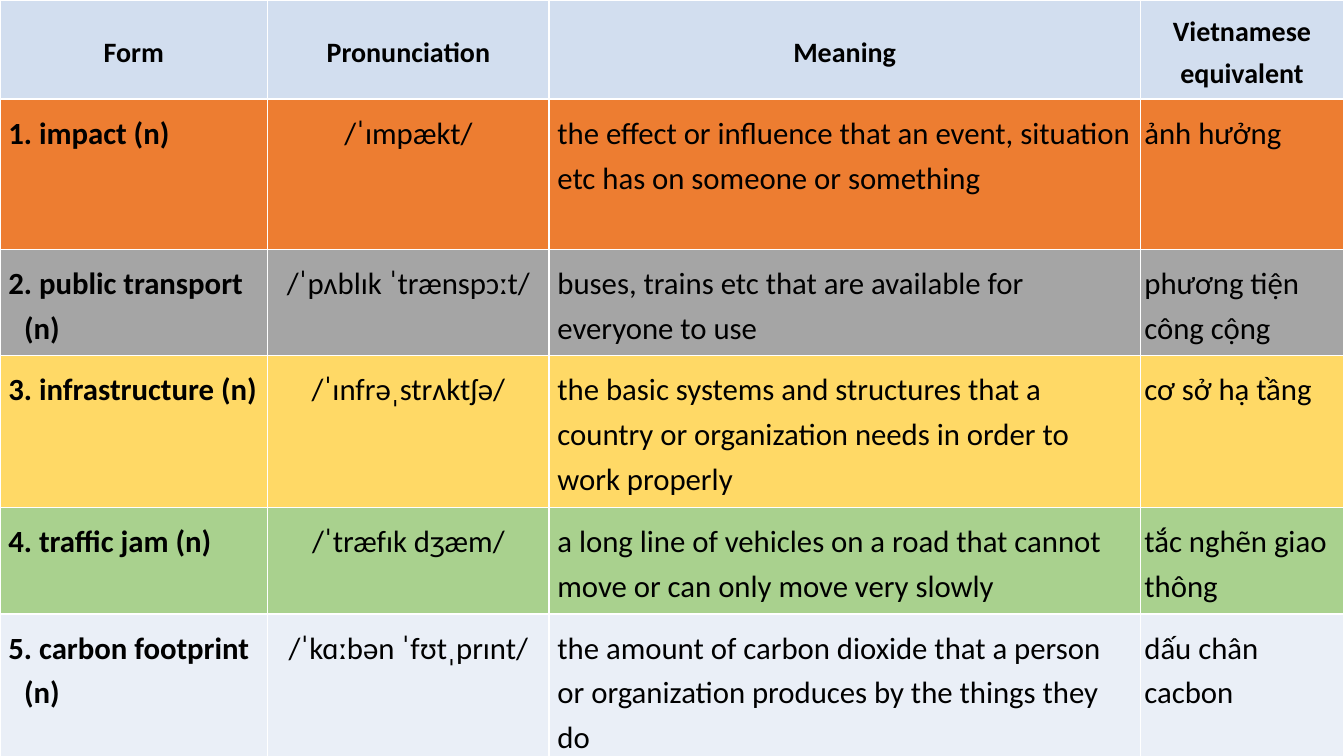
from dataclasses import dataclass

from pptx import Presentation
from pptx.dml.color import RGBColor
from pptx.enum.text import MSO_ANCHOR as Anchor, PP_ALIGN as Align
from pptx.util import Pt

PX = 9525  # EMU per px, 96 px to the inch
SLIDE_W, SLIDE_H = 1280, 720
HEADER_H = 94
HEADER_FILL = "D2DEEF"
PAD, NARROW_PAD, HANGING = 8, 4, 15


@dataclass
class Column:
    heading: str
    width: int
    pad: int
    align: Align = Align.LEFT
    bold: bool = False
    hanging: int = 0


@dataclass
class Entry:
    texts: tuple[str, str, str, str]
    height: int
    fill: str


COLUMNS = [
    Column("Form", 255, PAD, bold=True, hanging=HANGING),
    Column("Pronunciation", 268, NARROW_PAD, Align.CENTER),
    Column("Meaning", 563, PAD),
    Column("Vietnamese equivalent", 194, NARROW_PAD),
]

ENTRIES = [
    Entry(("1. impact (n)", "/ˈɪmpækt/",
           "the effect or influence that an event, situation etc has on someone or something",
           "ảnh hưởng"), 143, "ED7D31"),
    Entry(("2. public transport (n)", "/ˈpʌblɪk ˈtrænspɔːt/",
           "buses, trains etc that are available for everyone to use",
           "phương tiện công cộng"), 99, "A5A5A5"),
    Entry(("3. infrastructure (n)", "/ˈɪnfrəˌstrʌktʃə/",
           "the basic systems and structures that a country or organization needs "
           "in order to work properly",
           "cơ sở hạ tầng"), 143, "FFD966"),
    Entry(("4. traffic jam (n)", "/ˈtræfɪk dʒæm/",
           "a long line of vehicles on a road that cannot move or can only move very slowly",
           "tắc nghẽn giao thông"), 99, "A9D18E"),
    Entry(("5. carbon footprint (n)", "/ˈkɑːbən ˈfʊtˌprɪnt/",
           "the amount of carbon dioxide that a person or organization produces "
           "by the things they do",
           "dấu chân cacbon"), 143, "EAEFF7"),
]


def px(n: int) -> int:
    return n * PX


def rgb(value: str) -> RGBColor:
    return RGBColor.from_string(value)


def fill_cell(cell, text: str, fill: str, pad: int, size: int,
              bold: bool, align: Align, hanging: int = 0) -> None:
    cell.fill.solid()
    cell.fill.fore_color.rgb = rgb(fill)
    cell.margin_left = cell.margin_right = px(pad)
    cell.margin_top = cell.margin_bottom = px(PAD)
    p = cell.text_frame.paragraphs[0]
    p.text = text
    p.alignment = align
    p.line_spacing = 1.2
    p.font.name = "Calibri"
    p.font.size = Pt(size)
    p.font.bold = bold
    p.font.color.rgb = rgb("000000")
    if hanging:
        pPr = p._p.get_or_add_pPr()
        pPr.set("marL", str(px(hanging)))
        pPr.set("indent", str(-px(hanging)))


def add_vocabulary(s) -> None:
    height = HEADER_H + sum(e.height for e in ENTRIES)
    table = s.shapes.add_table(len(ENTRIES) + 1, len(COLUMNS), 0, 0,
                               px(SLIDE_W), px(height)).table
    table.horz_banding = False

    # Header row
    table.rows[0].height = px(HEADER_H)
    for c, col in enumerate(COLUMNS):
        table.columns[c].width = px(col.width)
        cell = table.cell(0, c)
        cell.vertical_anchor = Anchor.MIDDLE
        fill_cell(cell, col.heading, HEADER_FILL, NARROW_PAD, 20, True, Align.CENTER)

    # Vocabulary rows
    for r, entry in enumerate(ENTRIES, start=1):
        table.rows[r].height = px(entry.height)
        for c, (col, text) in enumerate(zip(COLUMNS, entry.texts)):
            fill_cell(table.cell(r, c), text, entry.fill, col.pad, 22,
                      col.bold, col.align, col.hanging)


def main() -> None:
    prs = Presentation()
    prs.slide_width, prs.slide_height = px(SLIDE_W), px(SLIDE_H)
    s = prs.slides.add_slide(prs.slide_layouts[6])
    add_vocabulary(s)
    prs.save("out.pptx")


if __name__ == "__main__":
    main()
